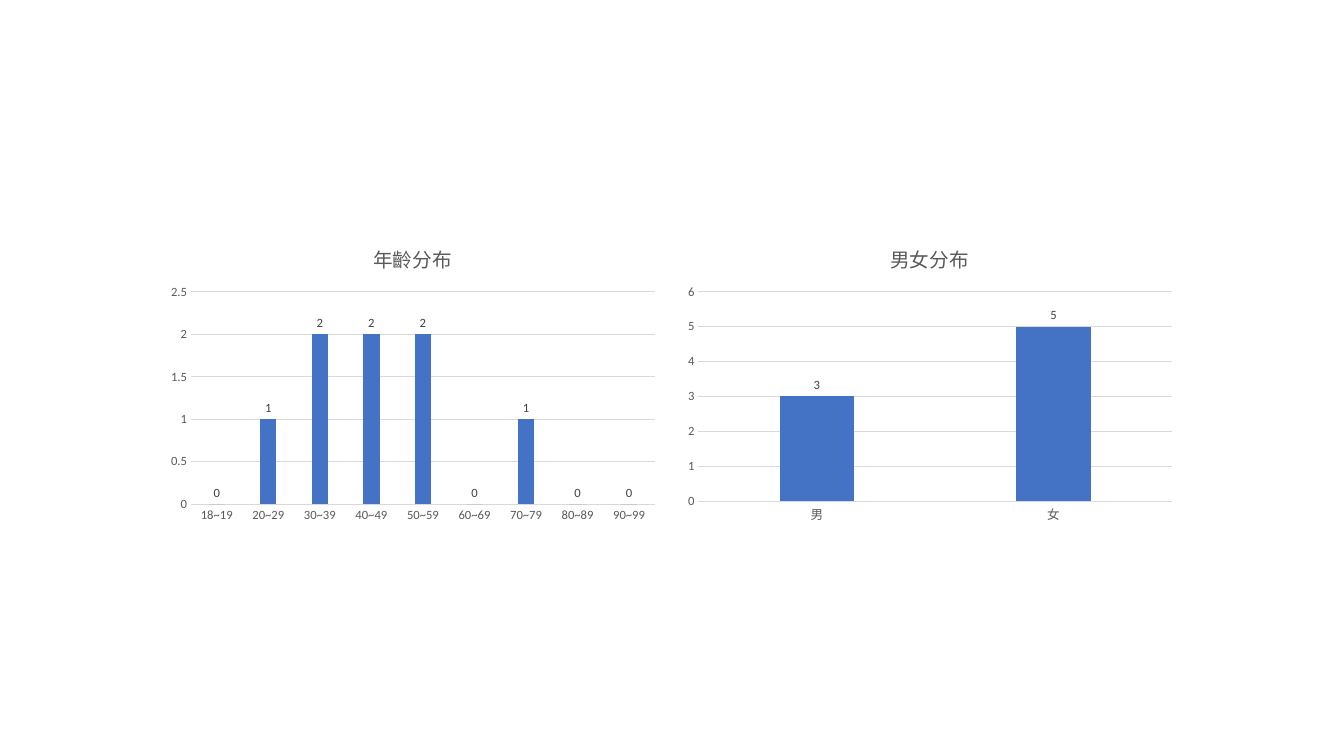
from pptx import Presentation
from pptx.chart.data import CategoryChartData
from pptx.dml.color import RGBColor
from pptx.enum.chart import XL_CHART_TYPE, XL_LABEL_POSITION, XL_TICK_MARK
from pptx.util import Emu, Pt

COLUMN = XL_CHART_TYPE.COLUMN_CLUSTERED
OUTSIDE_END = XL_LABEL_POSITION.OUTSIDE_END
NO_TICK = XL_TICK_MARK.NONE

PX = 914400 / 100.8
FONT = "Calibri"
COLORS = {"bar": "4472C4", "grid": "D9D9D9", "axis": "595959",
          "label": "404040", "base": "000000"}

AGES = ["18~19"] + [f"{a}~{a + 9}" for a in range(20, 100, 10)]
AGE_COUNTS = [0, 1, 2, 2, 2, 0, 1, 0, 0]
SEXES = ["男", "女"]
SEX_COUNTS = [3, 5]


def px(n):
    """Turn pixels into EMU."""
    return Emu(round(n * PX))


def rgb(name):
    """Look up a named colour."""
    return RGBColor.from_string(COLORS[name])


def set_font(font, size, color):
    """Set typeface, size and colour of a font."""
    font.name = FONT
    font.size = Pt(size)
    font.bold = False
    font.color.rgb = rgb(color)


def write(tf, text, size=14, color="axis"):
    """Write formatted text into a text frame."""
    r = tf.paragraphs[0].add_run()
    r.text = text
    set_font(r.font, size, color)


def set_line(line):
    """Give a line the thin grid style."""
    line.color.rgb = rgb("grid")
    line.width = Pt(0.75)


def style_axes(chart, top, step):
    """Format both axes and the gridlines of a chart."""
    cat, val = chart.category_axis, chart.value_axis
    for axis in (cat, val):
        axis.major_tick_mark = axis.minor_tick_mark = NO_TICK
        set_font(axis.tick_labels.font, 9, "axis")
    set_line(cat.format.line)
    val.format.line.fill.background()
    val.has_major_gridlines = True
    set_line(val.major_gridlines.format.line)
    val.minimum_scale, val.maximum_scale, val.major_unit = 0, top, step


def style_bars(plot):
    """Format the columns and their value labels."""
    plot.gap_width = 219
    plot.overlap = -27
    plot.vary_by_categories = False
    fill = plot.series[0].format.fill
    fill.solid()
    fill.fore_color.rgb = rgb("bar")
    plot.has_data_labels = True
    labels = plot.data_labels
    labels.show_value = True
    labels.position = OUTSIDE_END
    set_font(labels.font, 9, "label")


def add_distribution(s, box, title, cats, vals, top, step):
    """Place one titled column chart in the given box."""
    data = CategoryChartData(number_format="General")
    data.categories = cats
    data.add_series("Series 1", vals)
    chart = s.shapes.add_chart(COLUMN, *map(px, box), data).chart
    set_font(chart.font, 10, "base")
    chart.has_legend = False
    chart.has_title = True
    chart.chart_title.include_in_layout = False
    write(chart.chart_title.text_frame, title)
    style_axes(chart, top, step)
    style_bars(chart.plots[0])


def main():
    """Build the slide and save it."""
    prs = Presentation()
    prs.slide_width, prs.slide_height = px(1344), px(756)
    s = prs.slides.add_slide(prs.slide_layouts[6])
    add_distribution(s, (161, 227, 504, 302), "年齡分布",
                     AGES, AGE_COUNTS, 2.5, 0.5)
    add_distribution(s, (678, 227, 504, 302), "男女分布",
                     SEXES, SEX_COUNTS, 6, 1)
    prs.save("out.pptx")


if __name__ == "__main__":
    main()
